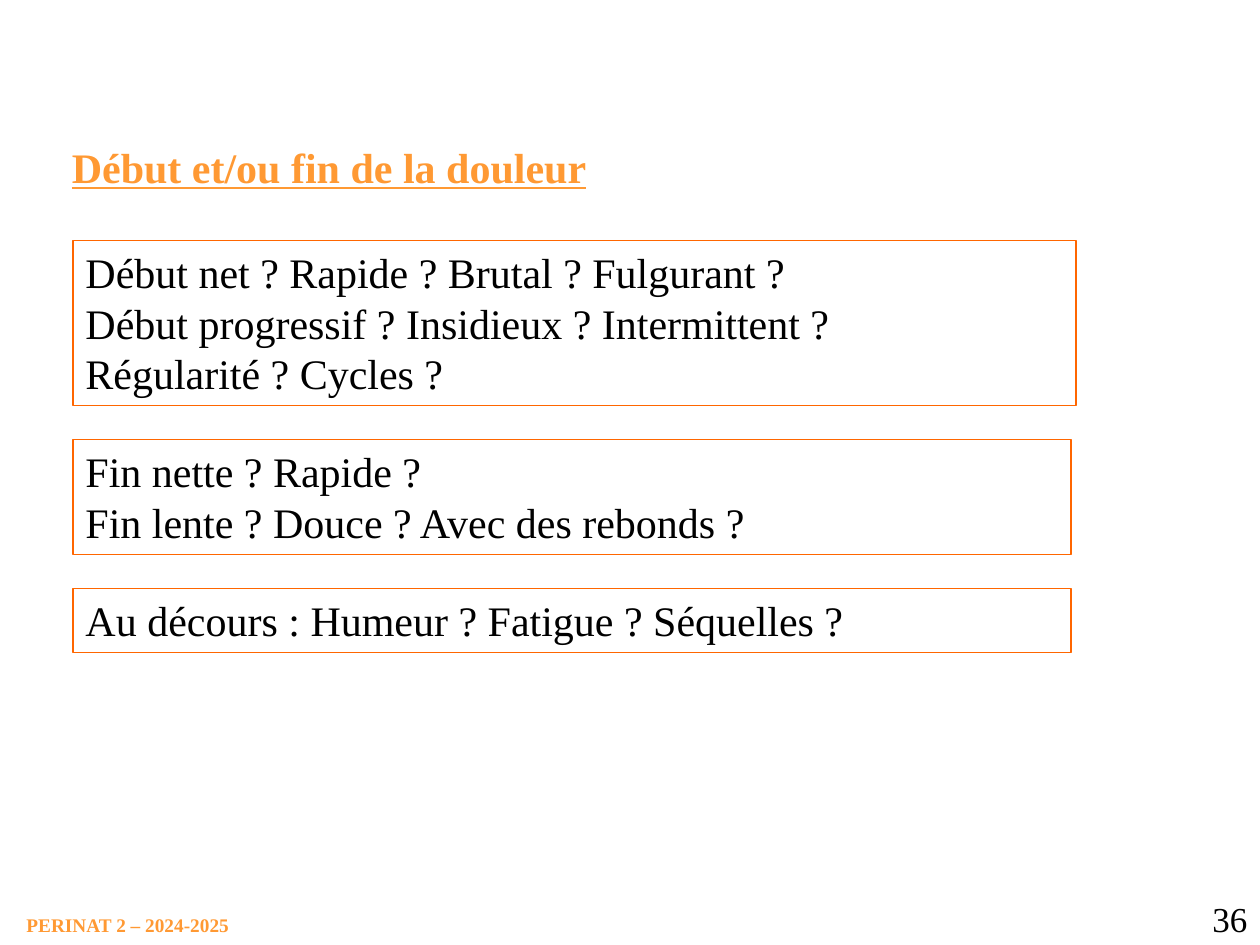
from pptx import Presentation
from pptx.dml.color import RGBColor
from pptx.enum.shapes import MSO_SHAPE
from pptx.enum.text import MSO_ANCHOR, MSO_AUTO_SIZE, PP_ALIGN
from pptx.util import Inches, Pt

RECT = MSO_SHAPE.RECTANGLE
TOP = MSO_ANCHOR.TOP
FIXED = MSO_AUTO_SIZE.NONE
LEFT, RIGHT = PP_ALIGN.LEFT, PP_ALIGN.RIGHT

FONT = "Times New Roman"
COLORS = {"accent": "FF9933", "line": "FF6600", "text": "000000"}

LINE_H, PAD, GAP = 0.4, 0.11, 0.27
PANELS = [
    (7.96, ["Début net ? Rapide ? Brutal ? Fulgurant ?",
            "Début progressif ? Insidieux ? Intermittent ?",
            "Régularité ? Cycles ?"]),
    (7.92, ["Fin nette ? Rapide ?",
            "Fin lente ? Douce ? Avec des rebonds ?"]),
    (7.92, ["Au décours : Humeur ? Fatigue ? Séquelles ?"]),
]


def color(name):
    return RGBColor.from_string(COLORS[name])


def write(shape, lines, size, ink="text", bold=False, align=LEFT):
    """Fill a shape with one paragraph per line."""
    frame = shape.text_frame
    frame.text = "\n".join(lines)
    frame.word_wrap = True
    frame.auto_size = FIXED
    frame.vertical_anchor = TOP
    for para in frame.paragraphs:
        para.alignment = align
        font = para.font
        font.name, font.size, font.bold = FONT, Pt(size), bold
        font.color.rgb = color(ink)
    return frame


def add_title(slide, x, y, w, h):
    title = slide.shapes.title
    title.left, title.top = Inches(x), Inches(y)
    title.width, title.height = Inches(w), Inches(h)
    frame = write(title, ["Début et/ou fin de la douleur"], 24, "accent", True)
    frame.paragraphs[0].font.underline = True


def add_panels(slide, x, y):
    """Stack the outlined boxes, each as tall as its lines."""
    for width, lines in PANELS:
        height = LINE_H * len(lines) + PAD
        box = slide.shapes.add_shape(
            RECT, Inches(x), Inches(y), Inches(width), Inches(height))
        box.shadow.inherit = False
        box.fill.background()
        box.line.color.rgb = color("line")
        box.line.width = Pt(0.75)
        write(box, lines, 24)
        y += height + GAP


def add_footer(slide, x, y, w, h):
    box = slide.shapes.add_textbox(Inches(x), Inches(y), Inches(w), Inches(h))
    frame = write(box, ["PERINAT 2 – 2024-2025"], 11, "accent", True)
    frame.margin_left = frame.margin_right = 0
    frame.margin_top = frame.margin_bottom = 0
    frame.word_wrap = False


def add_number(slide, x, y, w, h):
    box = slide.shapes.add_textbox(Inches(x), Inches(y), Inches(w), Inches(h))
    write(box, ["36"], 20, align=RIGHT)


def main():
    deck = Presentation()
    deck.slide_width, deck.slide_height = Inches(10), Inches(7.5)
    slide = deck.slides.add_slide(deck.slide_layouts.get_by_name("Title Only"))
    add_footer(slide, 0.21, 7.25, 1.64, 0.19)
    add_number(slide, 9.17, 7.07, 0.83, 0.43)
    add_title(slide, 0.47, 1.07, 4.37, 0.5)
    add_panels(slide, 0.58, 1.91)
    deck.save("out.pptx")


if __name__ == "__main__":
    main()
